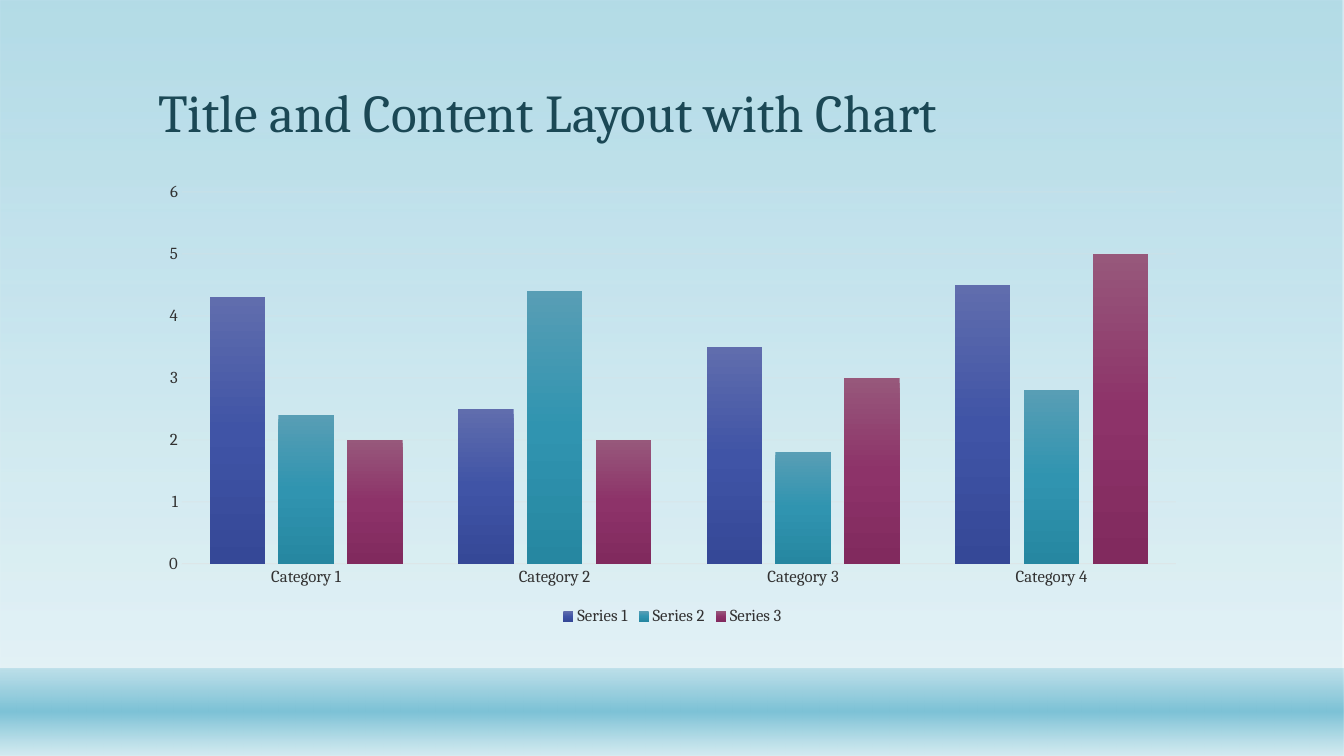
from lxml import etree
from pptx import Presentation
from pptx.chart.data import CategoryChartData
from pptx.dml.color import RGBColor
from pptx.enum.chart import XL_CHART_TYPE, XL_LEGEND_POSITION, XL_TICK_MARK
from pptx.enum.shapes import MSO_SHAPE
from pptx.enum.text import MSO_ANCHOR
from pptx.oxml.ns import qn
from pptx.util import Inches, Pt

RECTANGLE = MSO_SHAPE.RECTANGLE
CLUSTERED = XL_CHART_TYPE.COLUMN_CLUSTERED
LEGEND_BOTTOM = XL_LEGEND_POSITION.BOTTOM
NO_TICK = XL_TICK_MARK.NONE
BOTTOM = MSO_ANCHOR.BOTTOM

FONT = "Cambria"
TITLE_COLOR = "1B4855"
LABEL_COLOR = "323232"
GRID_COLOR = "E0E0E0"
GRID_OPACITY = 30
SKY = "7DC2D6"
MIST = "D4EBF1"

CATEGORIES = [f"Category {number}" for number in range(1, 5)]
SERIES = [
    ("Series 1", (4.3, 2.5, 3.5, 4.5), ("606DAD", "4054A6", "354897")),
    ("Series 2", (2.4, 4.4, 1.8, 2.8), ("589EB5", "3094B0", "2687A1")),
    ("Series 3", (2, 2, 3, 5), ("97587B", "8D3369", "812A5E")),
]


def rgb(value):
    return RGBColor.from_string(value)


def set_all(target, values):
    for name, value in values.items():
        setattr(target, name, value)


def set_opacity(color_element, percent):
    alpha = etree.SubElement(color_element, qn("a:alpha"))
    alpha.set("val", str(percent * 1000))


def fill_downward(fill, element, stops):
    """Fill from top to bottom; each stop is (position, colour, opacity), in percent."""
    fill.gradient()
    fill.gradient_angle = 270
    stop_list = element.find(".//" + qn("a:gsLst"))
    for old_stop in list(stop_list):
        stop_list.remove(old_stop)
    for position, color, opacity in stops:
        stop = etree.SubElement(stop_list, qn("a:gs"), pos=str(position * 1000))
        color_element = etree.SubElement(stop, qn("a:srgbClr"), val=color)
        if opacity < 100:
            set_opacity(color_element, opacity)


class SlideBuilder:
    def __init__(self, page):
        self.page = page

    def style_font(self, font, size, color):
        set_all(font, {"name": FONT, "size": Pt(size), "bold": False})
        font.color.rgb = rgb(color)

    def band(self, top, height, stops):
        shape = self.page.shapes.add_shape(
            RECTANGLE, 0, Inches(top), Inches(13.33), Inches(height))
        shape.shadow.inherit = False
        shape.line.fill.background()
        fill_downward(shape.fill, shape._element.spPr, stops)

    def title(self, left, top, width, height, text):
        box = self.page.shapes.add_textbox(
            Inches(left), Inches(top), Inches(width), Inches(height))
        set_all(box.text_frame, {"word_wrap": True, "vertical_anchor": BOTTOM})
        para = box.text_frame.paragraphs[0]
        para.line_spacing = 0.9
        span = para.add_run()
        span.text = text
        self.style_font(span.font, 38, TITLE_COLOR)

    def faint_line(self, line, element):
        line.width = Pt(0.75)
        line.color.rgb = rgb(GRID_COLOR)
        set_opacity(element.find(".//" + qn("a:srgbClr")), GRID_OPACITY)

    def style_axis(self, axis):
        set_all(axis, {"major_tick_mark": NO_TICK, "minor_tick_mark": NO_TICK})
        self.style_font(axis.tick_labels.font, 12, LABEL_COLOR)

    def column_chart(self, left, top, width, height):
        data = CategoryChartData()
        data.categories = CATEGORIES
        for name, values, _ in SERIES:
            data.add_series(name, values)
        chart = self.page.shapes.add_chart(
            CLUSTERED, Inches(left), Inches(top), Inches(width), Inches(height), data).chart
        set_all(chart, {"has_title": False, "has_legend": True})
        self.style_font(chart.font, 10, "000000")

        set_all(chart.legend, {"position": LEGEND_BOTTOM, "include_in_layout": False})
        self.style_font(chart.legend.font, 12, LABEL_COLOR)

        category_axis, value_axis = chart.category_axis, chart.value_axis
        category_line = category_axis.format.line
        category_line.color.rgb = rgb(GRID_COLOR)
        self.faint_line(category_line, category_axis._element.find(qn("c:spPr")))
        set_all(value_axis, {"minimum_scale": 0, "maximum_scale": 6, "major_unit": 1,
                             "has_major_gridlines": True})
        value_axis.format.line.fill.background()
        grid_line = value_axis.major_gridlines.format.line
        grid_line.color.rgb = rgb(GRID_COLOR)
        self.faint_line(grid_line, value_axis._element.find(qn("c:majorGridlines")))
        for axis in (category_axis, value_axis):
            self.style_axis(axis)

        plot = chart.plots[0]
        set_all(plot, {"gap_width": 100, "overlap": -24, "vary_by_categories": False})
        for series, (_, _, colors) in zip(plot.series, SERIES):
            stops = [(50 * index, color, 100) for index, color in enumerate(colors)]
            fill_downward(series.format.fill, series._element, stops)


def main():
    deck = Presentation()
    set_all(deck, {"slide_width": Inches(13.33), "slide_height": Inches(7.5)})
    builder = SlideBuilder(deck.slides.add_slide(deck.slide_layouts[6]))
    builder.band(0, 7.5, [(0, SKY, 58), (88, MIST, 65)])
    builder.band(6.63, 0.87, [(1, SKY, 38), (49, SKY, 100), (100, MIST, 89)])
    builder.title(1.47, 0.29, 10.4, 1.19, "Title and Content Layout with Chart")
    builder.column_chart(1.47, 1.72, 10.4, 4.53)
    deck.save("out.pptx")


if __name__ == "__main__":
    main()
